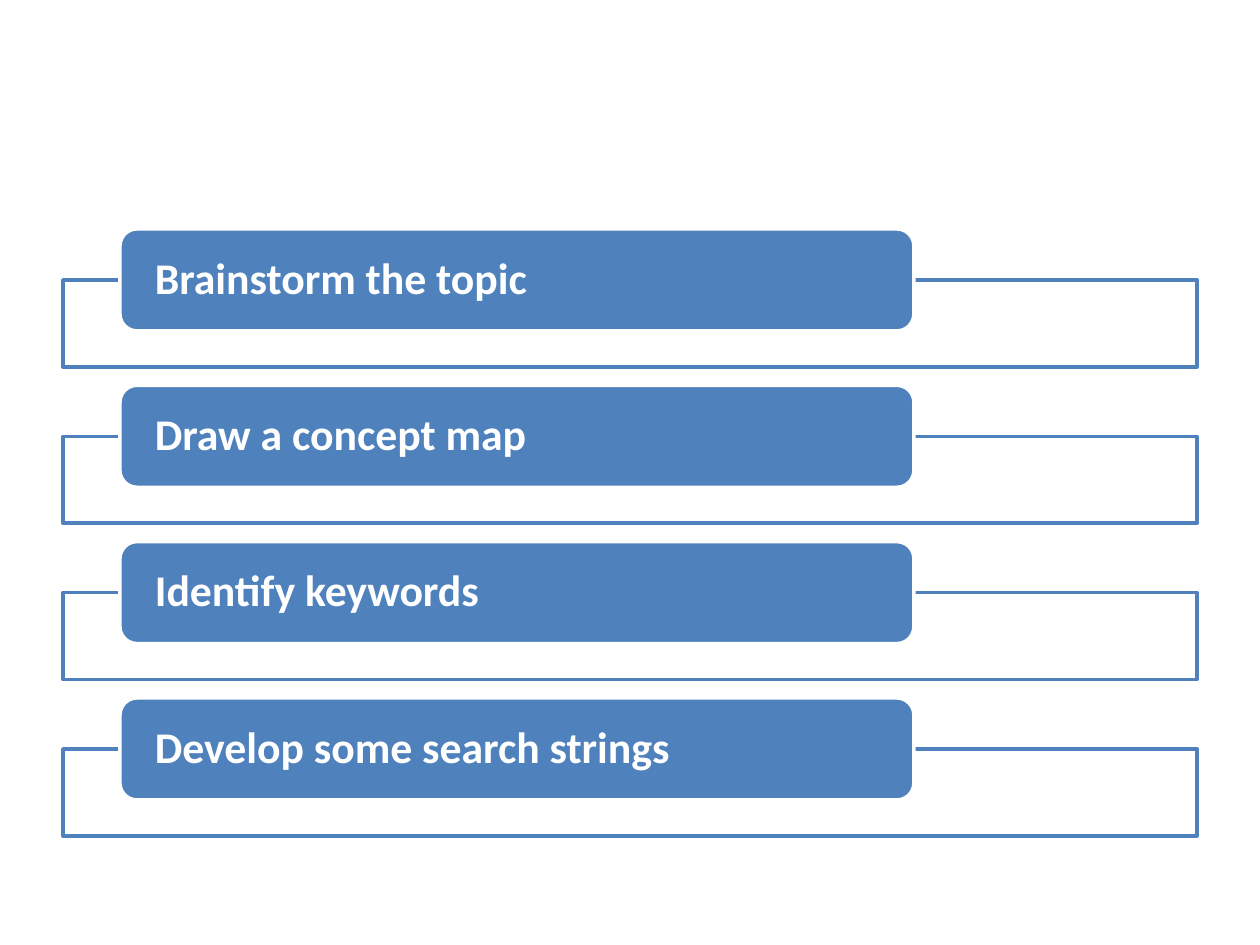
from pptx import Presentation
from pptx.dml.color import RGBColor
from pptx.enum.shapes import MSO_SHAPE as Shape
from pptx.enum.text import MSO_ANCHOR as Anchor, PP_ALIGN as Align
from pptx.util import Emu, Pt

STEPS = [
    "Brainstorm the topic",
    "Draw a concept map",
    "Identify keywords",
    "Develop some search strings",
]
BLUE, WHITE = "4F81BD", "FFFFFF"
FIRST, LAST = 229, 698  # tops of the first and last label
LABEL_X, LABEL_W, LABEL_H = 120, 794, 102
FRAME_X, FRAME_W, FRAME_H = 63, 1134, 87
DROP = 51  # from label top to frame top
INSET = 30


def px(n):
    return Emu(round(n * 914400 / 126))


def color(code):
    return RGBColor.from_string(code)


def add_box(slide, kind, x, y, w, h, fill, line):
    box = slide.shapes.add_shape(kind, px(x), px(y), px(w), px(h))
    box.shadow.inherit = False
    box.fill.solid()
    box.fill.fore_color.rgb = color(fill)
    box.line.color.rgb = color(line)
    box.line.width = Pt(2)
    return box


def put_text(box, text, size=25, bold=True, ink=WHITE, font="Calibri"):
    frame = box.text_frame
    frame.word_wrap = True
    frame.vertical_anchor = Anchor.MIDDLE
    frame.margin_left = frame.margin_right = px(INSET)
    frame.margin_top = frame.margin_bottom = 0
    para = frame.paragraphs[0]
    para.alignment = Align.LEFT
    para.line_spacing = 0.9
    run = para.add_run()
    run.text = text
    run.font.name = font
    run.font.size = Pt(size)
    run.font.bold = bold
    run.font.color.rgb = color(ink)


def main():
    deck = Presentation()
    deck.slide_width, deck.slide_height = px(1260), px(945)
    slide = deck.slides.add_slide(deck.slide_layouts[6])
    pitch = (LAST - FIRST) / (len(STEPS) - 1)
    for i, step in enumerate(STEPS):
        top = FIRST + i * pitch
        add_box(slide, Shape.RECTANGLE, FRAME_X, top + DROP,
                FRAME_W, FRAME_H, WHITE, BLUE)
        label = add_box(slide, Shape.ROUNDED_RECTANGLE, LABEL_X, top,
                        LABEL_W, LABEL_H, BLUE, WHITE)
        put_text(label, step)
    deck.save("out.pptx")


if __name__ == "__main__":
    main()
